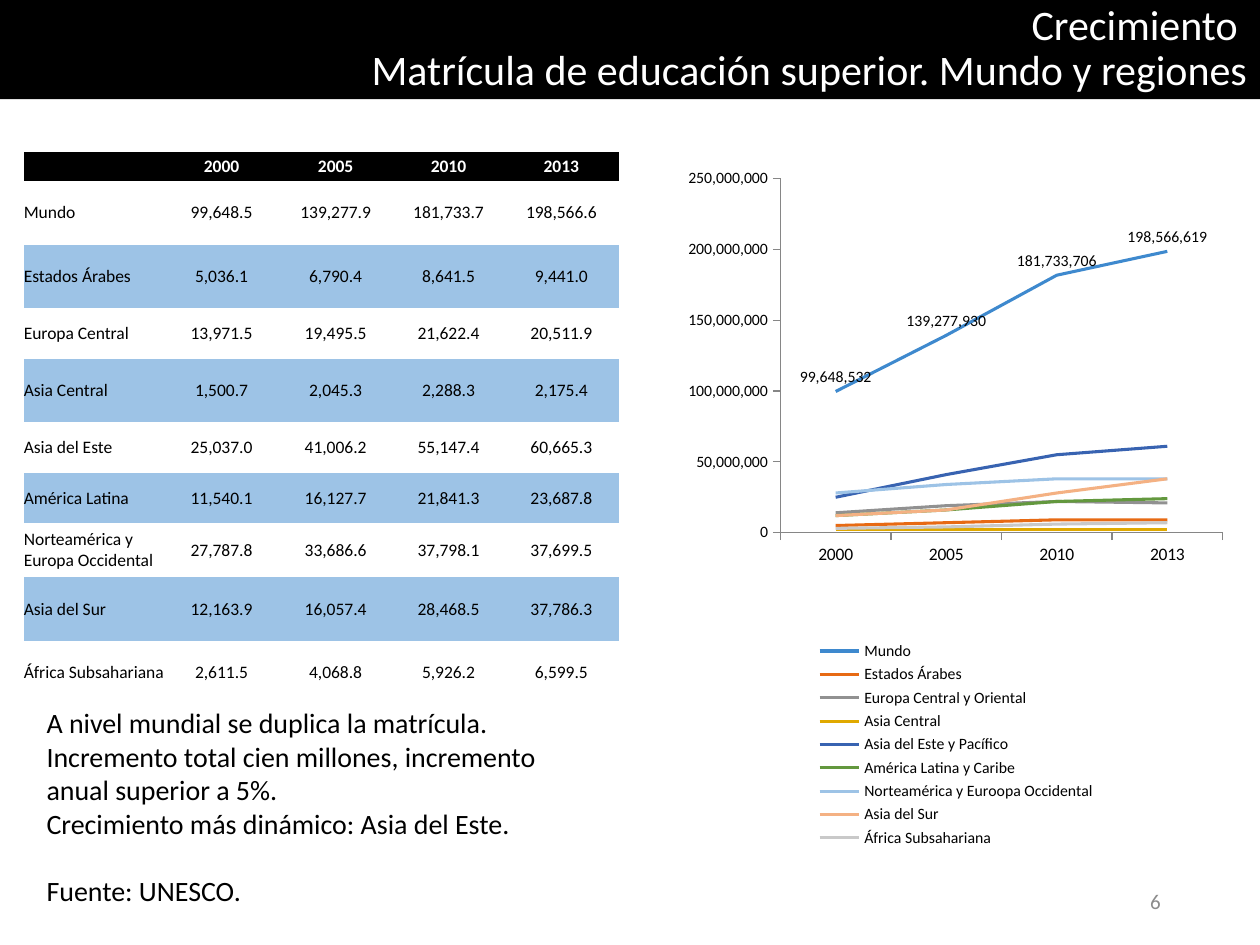
from dataclasses import dataclass

from lxml import etree
from pptx import Presentation
from pptx.chart.data import CategoryChartData
from pptx.dml.color import RGBColor
from pptx.enum.chart import XL_CHART_TYPE, XL_LABEL_POSITION, XL_LEGEND_POSITION, XL_TICK_MARK
from pptx.enum.text import MSO_ANCHOR, MSO_AUTO_SIZE, PP_ALIGN
from pptx.oxml.ns import qn
from pptx.util import Cm, Pt

LEFT, CENTER, RIGHT = PP_ALIGN.LEFT, PP_ALIGN.CENTER, PP_ALIGN.RIGHT
MIDDLE = MSO_ANCHOR.MIDDLE
OUTSIDE, NO_TICK = XL_TICK_MARK.OUTSIDE, XL_TICK_MARK.NONE
NO_STYLE_TABLE = "{2D5ABB26-0587-4C30-8999-92F81FD0307C}"


@dataclass(frozen=True)
class Theme:
    font: str = "Calibri"
    black: str = "000000"
    white: str = "FFFFFF"
    band: str = "9DC3E6"
    axis: str = "868686"
    page: str = "8C8C8C"
    lines: tuple = ("5B9BD5", "ED7D31", "A5A5A5", "FFC000", "4472C4", "70AD47")
    dark: float = -0.12
    light: float = 0.4
    title_size: int = 24
    body_size: int = 16
    page_size: int = 12
    table_size: int = 10
    chart_size: int = 10
    small_size: int = 9


T = Theme()

# Content
TITLE = "Crecimiento \vMatrícula de educación superior. Mundo y regiones"
YEARS = ["2000", "2005", "2010", "2013"]
TALL, SHORT, TWO_LINES, HEADER = 1.28, 1.02, 1.09, 0.58  # row heights, cm
COLUMNS = [2.84, 2.29, 2.31, 2.24, 2.31]
ENROLMENT = [  # row height, region, thousands of students
    (TALL, "Mundo", "99,648.5", "139,277.9", "181,733.7", "198,566.6"),
    (TALL, "Estados Árabes", "5,036.1", "6,790.4", "8,641.5", "9,441.0"),
    (SHORT, "Europa Central", "13,971.5", "19,495.5", "21,622.4", "20,511.9"),
    (TALL, "Asia Central", "1,500.7", "2,045.3", "2,288.3", "2,175.4"),
    (SHORT, "Asia del Este", "25,037.0", "41,006.2", "55,147.4", "60,665.3"),
    (SHORT, "América Latina", "11,540.1", "16,127.7", "21,841.3", "23,687.8"),
    (TWO_LINES, "Norteamérica y Europa Occidental", "27,787.8", "33,686.6", "37,798.1", "37,699.5"),
    (TALL, "Asia del Sur", "12,163.9", "16,057.4", "28,468.5", "37,786.3"),
    (TALL, "África Subsahariana", "2,611.5", "4,068.8", "5,926.2", "6,599.5"),
]
WORLD = ("Mundo", (99648532, 139277930, 181733706, 198566619))
REGIONS = [  # millions of students
    ("Estados Árabes", (5, 7, 9, 9)),
    ("Europa Central y Oriental", (14, 19, 22, 21)),
    ("Asia Central", (2, 2, 2, 2)),
    ("Asia del Este y Pacífico", (25, 41, 55, 61)),
    ("América Latina y Caribe", (12, 16, 22, 24)),
    ("Norteamérica y Euroopa Occidental", (28, 34, 38, 38)),
    ("Asia del Sur", (12, 16, 28, 38)),
    ("África Subsahariana", (3, 4, 6, 7)),
]
NOTES = [
    "A nivel mundial se duplica la matrícula. Incremento total cien millones, "
    "incremento anual superior a 5%.",
    "Crecimiento más dinámico: Asia del Este.",
    "Fuente: UNESCO.",
]
PAGE = "6"


def rgb(value):
    return RGBColor.from_string(value)


def set_font(font, size, color=T.black, bold=False):
    font.name, font.size, font.bold = T.font, Pt(size), bold
    font.color.rgb = rgb(color)


def format_text(tf, size, color=T.black, align=LEFT, bold=False):
    for p in tf.paragraphs:
        p.alignment = align
        for r in p.runs:
            set_font(r.font, size, color, bold)


def add_text(slide, box, text, size, color=T.black, align=LEFT):
    tf = slide.shapes.add_textbox(*map(Cm, box)).text_frame
    tf.word_wrap = True
    tf.text = text
    format_text(tf, size, color, align)
    return tf


def set_layout(element, index, x, y, w, h, inner=False):
    """Place a chart part by fractions of the chart area."""
    for old in element.findall(qn("c:layout")):
        element.remove(old)
    layout = etree.Element(qn("c:layout"))
    manual = etree.SubElement(layout, qn("c:manualLayout"))
    settings = [("layoutTarget", "inner")] if inner else []
    settings += [("xMode", "edge"), ("yMode", "edge"), ("x", x), ("y", y), ("w", w), ("h", h)]
    for tag, value in settings:
        etree.SubElement(manual, qn("c:" + tag)).set("val", str(value))
    element.insert(index, layout)


def add_title(slide):
    sp = slide.shapes.title
    sp.left, sp.top, sp.width, sp.height = map(Cm, (0, 0, 25.4, 2))
    sp.fill.solid()
    sp.fill.fore_color.rgb = rgb(T.black)
    tf = sp.text_frame
    tf.text = TITLE
    tf.auto_size = MSO_AUTO_SIZE.NONE
    tf.vertical_anchor = MIDDLE
    tf.paragraphs[0].line_spacing = 0.9
    format_text(tf, T.title_size, T.white, RIGHT)


def add_enrolment_chart(slide):
    data = CategoryChartData(number_format="#,##0")
    data.categories = YEARS
    data.add_series(*WORLD)
    for name, millions in REGIONS:
        data.add_series(name, [m * 1_000_000 for m in millions])
    box = map(Cm, (13.56, 3.18, 11.43, 14))
    chart = slide.shapes.add_chart(XL_CHART_TYPE.LINE, *box, data).chart
    set_font(chart.font, T.chart_size)
    chart.has_title = False

    # Series: the palette repeats in a lighter tone
    plot = chart.plots[0]
    plot.vary_by_categories = False
    for i, series in enumerate(plot.series):
        series.smooth = False
        line = series.format.line
        line.width = Pt(1.75)
        line.color.rgb = rgb(T.lines[i % len(T.lines)])
        line.color.brightness = T.dark if i < len(T.lines) else T.light
    labels = plot.series[0].data_labels
    labels.show_value = True
    labels.position = XL_LABEL_POSITION.ABOVE
    labels.number_format, labels.number_format_is_linked = "#,##0", False
    set_font(labels.font, T.small_size)

    # Axes
    for axis, size, number_format in ((chart.category_axis, T.chart_size, "General"),
                                      (chart.value_axis, T.small_size, "#,##0")):
        axis.has_major_gridlines = False
        axis.major_tick_mark, axis.minor_tick_mark = OUTSIDE, NO_TICK
        axis.format.line.color.rgb = rgb(T.axis)
        axis.format.line.width = Pt(0.75)
        ticks = axis.tick_labels
        ticks.number_format, ticks.number_format_is_linked = number_format, False
        set_font(ticks.font, size)

    # Legend and plot area
    chart.has_legend = True
    legend = chart.legend
    legend.position = XL_LEGEND_POSITION.BOTTOM
    legend.include_in_layout = False
    set_font(legend.font, T.small_size)
    set_layout(legend._element, 1, 0.25, 0.69, 0.5, 0.31)
    plot_area = chart._chartSpace.find(".//" + qn("c:plotArea"))
    set_layout(plot_area, 0, 0.19, 0.03, 0.78, 0.51, inner=True)


def add_enrolment_table(slide):
    rows = [(HEADER, "", *YEARS)] + ENROLMENT
    box = map(Cm, (0.48, 3.07, sum(COLUMNS), sum(row[0] for row in rows)))
    table = slide.shapes.add_table(len(rows), len(COLUMNS), *box).table
    table.horz_banding = False
    table._tbl.tblPr.find(qn("a:tableStyleId")).text = NO_STYLE_TABLE
    for column, width in zip(table.columns, COLUMNS):
        column.width = Cm(width)
    for i, (height, *texts) in enumerate(rows):
        table.rows[i].height = Cm(height)
        header = i == 0
        for j, text in enumerate(texts):
            cell = table.cell(i, j)
            cell.margin_left = cell.margin_right = cell.margin_top = cell.margin_bottom = 0
            cell.vertical_anchor = MIDDLE
            if header or i % 2 == 0:
                cell.fill.solid()
                cell.fill.fore_color.rgb = rgb(T.black if header else T.band)
            else:
                cell.fill.background()
            cell.text = text
            format_text(cell.text_frame, T.table_size, T.white if header else T.black,
                        CENTER if j else LEFT, header)
            if not text:  # keeps the empty cell from stretching its row
                end = etree.SubElement(cell.text_frame.paragraphs[0]._p, qn("a:endParaRPr"))
                end.set("sz", str(T.table_size * 100))


def main():
    prs = Presentation()
    prs.slide_width, prs.slide_height = Cm(25.4), Cm(19.05)
    slide = prs.slides.add_slide(prs.slide_layouts[5])
    add_title(slide)
    add_enrolment_chart(slide)
    add_enrolment_table(slide)

    # Remarks, with the source set one line apart
    tf = add_text(slide, (0.69, 14.1, 11.73, 4.37), "\n".join(NOTES), T.body_size)
    tf.auto_size = MSO_AUTO_SIZE.SHAPE_TO_FIT_TEXT
    tf.paragraphs[-1].space_before = Pt(T.body_size * 1.2)

    # Page number
    tf = add_text(slide, (17.93, 17.65, 5.72, 1.02), PAGE, T.page_size, T.page, RIGHT)
    tf.vertical_anchor = MIDDLE
    prs.save("out.pptx")


if __name__ == "__main__":
    main()
